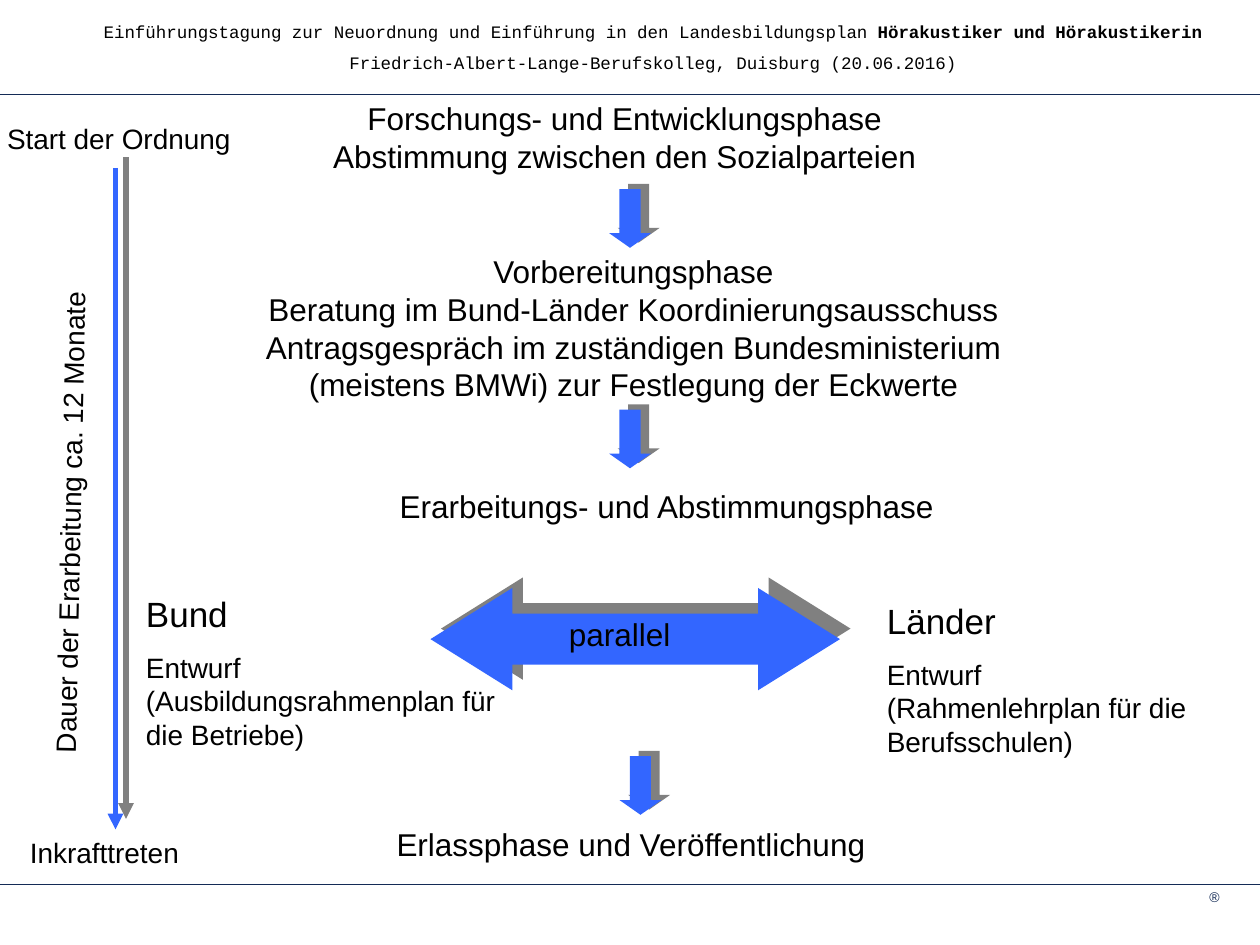
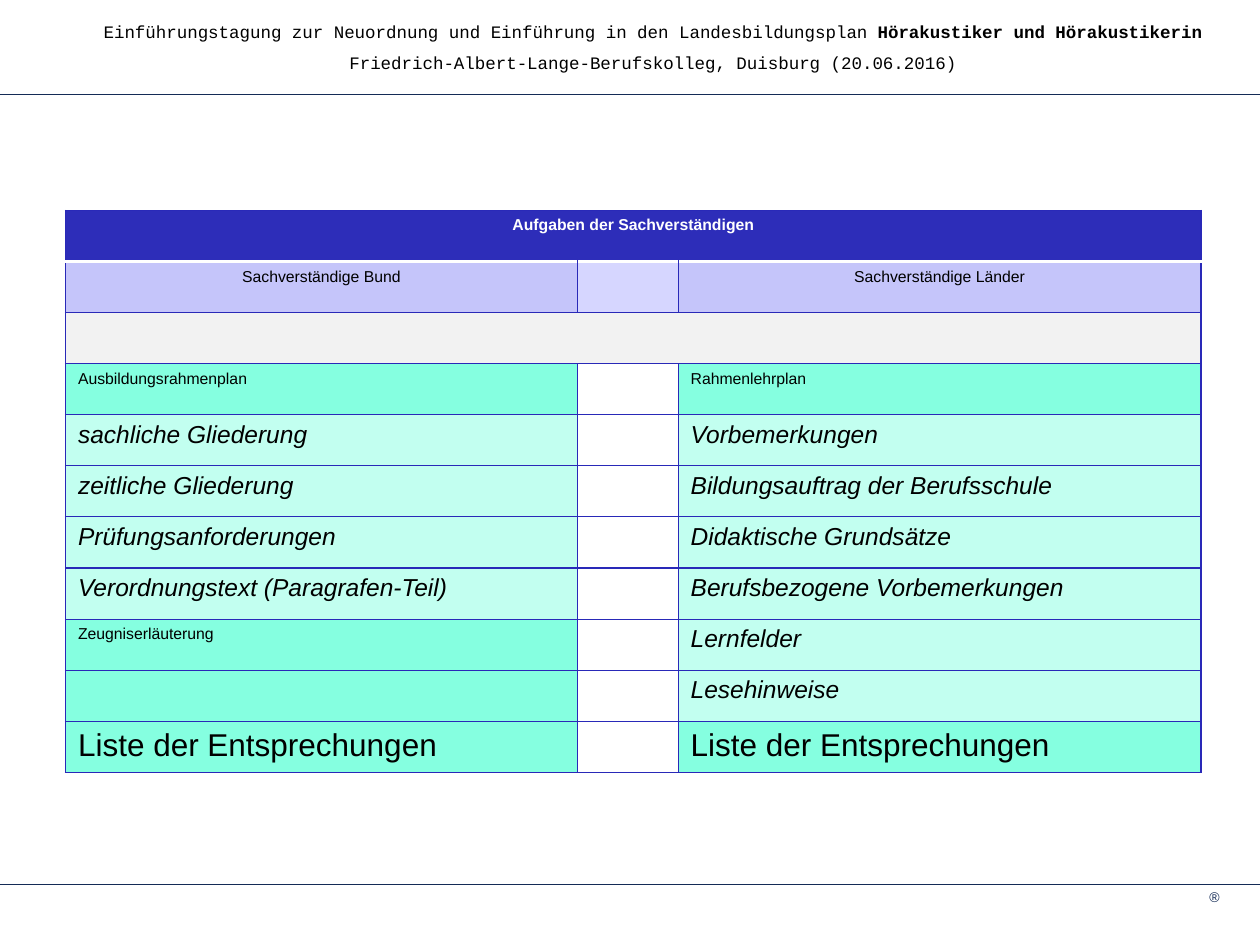
from dataclasses import dataclass

from lxml.etree import SubElement as Sub
from pptx import Presentation
from pptx.dml.color import RGBColor as Rgb
from pptx.enum.shapes import MSO_CONNECTOR as Link, MSO_SHAPE as Kind
from pptx.enum.text import MSO_ANCHOR as Anchor, MSO_AUTO_SIZE as Fit, PP_ALIGN as Align
from pptx.oxml.ns import qn
from pptx.util import Pt


@dataclass(frozen=True)
class Theme:
    # Fonts and sizes
    sans: str = "Arial"
    mono: str = "Courier New"
    mark: float = 8
    cell: float = 9
    head: float = 10
    item: float = 14
    note: float = 16
    phase: float = 18
    side: float = 20
    gap: float = 0.57  # space before a paragraph, as a share of its size
    # Colours
    ink: str = "000000"
    white: str = "FFFFFF"
    navy: str = "142B56"
    blue: str = "3366FF"
    grey: str = "808080"
    edge: str = "2929B8"
    band: str = "2D2DB9"
    lilac: str = "C5C5FA"
    pale: str = "D6D6FF"
    fog: str = "F2F2F2"
    mint: str = "85FFE0"
    foam: str = "C2FFF0"


class Deck:
    def __init__(self, theme):
        self.theme = theme
        self.prs = Presentation()
        self.prs.slide_width, self.prs.slide_height = Pt(720), Pt(540)
        self.slide = None

    def page(self):
        """Start a slide with header, rules and footer mark."""
        t = self.theme
        self.slide = self.prs.slides.add_slide(self.prs.slide_layouts[5])
        self.header()
        for y in (54, 505.5):
            self.line((0, y), (720, y), t.navy, 0.75)
        self.text((684, 504, 24, 16.5), ["®"], t.mark, color=t.navy)

    def header(self):
        t = self.theme
        title = self.slide.shapes.title
        title.left, title.top, title.width, title.height = map(Pt, (42.5, 8.6, 661, 37.5))
        frame = title.text_frame
        frame.auto_size = Fit.NONE
        frame.vertical_anchor = Anchor.TOP
        frame.text = ("Einführungstagung zur Neuordnung und Einführung in den "
                      "Landesbildungsplan \n"
                      "Friedrich-Albert-Lange-Berufskolleg, Duisburg (20.06.2016)")
        first, second = frame.paragraphs
        job = first.add_run()
        job.text = "Hörakustiker und Hörakustikerin"
        for para in (first, second):
            para.alignment = Align.CENTER
            for run in para.runs:
                self.font(run.font, t.head, t.ink, t.mono)
        job.font.bold = True
        second.space_before = Pt(t.head * t.gap)

    def font(self, font, size, color, name=None):
        font.name = name or self.theme.sans
        font.size = Pt(size)
        font.color.rgb = Rgb.from_string(color)

    def text(self, box, lines, size, color=None, align=Align.LEFT,
             anchor=Anchor.TOP, gap=0, turn=0):
        """Text box; a line is a string or a (string, size) pair."""
        shape = self.slide.shapes.add_textbox(*map(Pt, box))
        shape.rotation = turn
        frame = shape.text_frame
        frame.word_wrap = True
        frame.vertical_anchor = anchor
        pairs = [(x, size) if isinstance(x, str) else x for x in lines]
        frame.text = "\n".join(words for words, _ in pairs)
        for i, (para, (_, pts)) in enumerate(zip(frame.paragraphs, pairs)):
            para.alignment = align
            if i:
                para.space_before = Pt(pts * gap)
            for run in para.runs:
                self.font(run.font, pts, color or self.theme.ink)

    def phase(self, box, *lines):
        self.text(box, lines, self.theme.phase, align=Align.CENTER, anchor=Anchor.MIDDLE)

    def effect(self, shape, dist=0, angle=0):
        """Set the shadow; none when the distance is zero."""
        group = Sub(shape._element.spPr, qn("a:effectLst"))
        if dist:
            cast = Sub(group, qn("a:outerShdw"), dist=str(Pt(dist)),
                       dir=str(angle * 60000), algn="ctr", rotWithShape="0")
            Sub(cast, qn("a:srgbClr"), val=self.theme.grey)

    def line(self, start, end, color, width, arrow=False):
        link = self.slide.shapes.add_connector(Link.STRAIGHT, *map(Pt, start + end))
        link.line.color.rgb = Rgb.from_string(color)
        link.line.width = Pt(width)
        if arrow:
            Sub(link.line._get_or_add_ln(), qn("a:tailEnd"), type="triangle")
        self.effect(link, 8.5 if arrow else 0, 315)

    def arrow(self, kind, box, tip, dist, angle):
        shape = self.slide.shapes.add_shape(kind, *map(Pt, box))
        shape.adjustments[0], shape.adjustments[1] = 0.5, tip
        shape.fill.solid()
        shape.fill.fore_color.rgb = Rgb.from_string(self.theme.blue)
        shape.line.fill.background()
        self.effect(shape, dist, angle)

    def down(self, x, y):
        self.arrow(Kind.DOWN_ARROW, (x, y, 24, 33.6), 0.35, 5.8, 329)

    def table(self, spot, widths, high, rows, looks):
        """Rows hold (text, look) cells; a single cell spans its row."""
        t = self.theme
        grid = self.slide.shapes.add_table(
            len(rows), len(widths), *map(Pt, spot),
            Pt(sum(widths)), Pt(high * len(rows))).table
        grid.first_row = grid.horz_banding = False
        for col, width in zip(grid.columns, widths):
            col.width = Pt(width)
        for r, row in enumerate(rows):
            grid.rows[r].height = Pt(high)
            if len(row) == 1:
                grid.cell(r, 0).merge(grid.cell(r, len(widths) - 1))
                row = row * len(widths)
            for c, (words, look) in enumerate(row):
                cell = grid.cell(r, c)
                self.fill(cell, "" if cell.is_spanned else words, looks[look])
                white = {0: "B", 1: "T"}.get(r)
                for at, side in enumerate("LRTB"):
                    self.edge(cell, at, side, *((t.white, 2) if side == white
                                                else (t.edge, 0.75)))

    def fill(self, cell, words, look):
        back, color, size, bold, italic, align = look
        cell.fill.solid()
        cell.fill.fore_color.rgb = Rgb.from_string(back)
        if words:
            cell.text_frame.text = words
            para = cell.text_frame.paragraphs[0]
            para.alignment = align
            font = para.runs[0].font
            self.font(font, size, color)
            font.bold, font.italic = bold, italic

    def edge(self, cell, at, side, color, width):
        props = cell._tc.get_or_add_tcPr()
        ln = Sub(props, qn(f"a:ln{side}"), w=str(Pt(width)))
        Sub(Sub(ln, qn("a:solidFill")), qn("a:srgbClr"), val=color)
        props.insert(at, ln)


def phases(deck):
    t = deck.theme
    deck.page()
    # Phases from top to bottom
    deck.phase((126, 54, 462, 48), "Forschungs- und Entwicklungsphase",
               "Abstimmung zwischen den Sozialparteien")
    deck.down(348, 108)
    deck.phase((106.5, 137.5, 511, 99.5), "Vorbereitungsphase",
               "Beratung im Bund-Länder Koordinierungsausschuss",
               "Antragsgespräch im zuständigen Bundesministerium",
               "(meistens BMWi) zur Festlegung der Eckwerte")
    deck.down(348, 234)
    deck.phase((90, 274.5, 582, 29), "Erarbeitungs- und Abstimmungsphase")
    # Two drafts side by side
    deck.text((76.3, 334.8, 231, 99.4),
              [("Bund", t.side), "Entwurf\v(Ausbildungsrahmenplan für die Betriebe)"],
              t.note, gap=t.gap)
    deck.text((499.7, 339, 198.7, 99.4),
              [("Länder", t.side), "Entwurf\v(Rahmenlehrplan für die Berufsschulen)"],
              t.note, gap=t.gap)
    deck.arrow(Kind.LEFT_RIGHT_ARROW, (246, 336, 234, 58.5), 0.8, 8.5, 315)
    deck.text((318, 348, 96, 29), ["parallel"], t.phase)
    deck.down(354, 432)
    deck.phase((162, 468, 397, 29), "Erlassphase und Veröffentlichung")
    # Time line on the left
    deck.text((10, 473.8, 114.5, 27), ["Inkrafttreten"], t.note)
    deck.line((66, 96), (66, 474), t.blue, 3, arrow=True)
    deck.text((-104.5, 285, 288, 27), ["Dauer der Erarbeitung ca. 12 Monate"], t.note,
              align=Align.CENTER, anchor=Anchor.MIDDLE, turn=271.1)
    deck.text((-3, 66, 153.4, 27), ["Start der Ordnung"], t.note)


def tasks(deck):
    t = deck.theme
    deck.page()
    # Look: fill, text colour, size, bold, italic, alignment
    looks = {
        "head": (t.band, t.white, t.cell, True, False, Align.CENTER),
        "who": (t.lilac, t.ink, t.cell, False, False, Align.CENTER),
        "mid": (t.pale, t.ink, t.cell, False, False, Align.LEFT),
        "fog": (t.fog, t.ink, t.cell, False, False, Align.LEFT),
        "none": (t.white, t.ink, t.cell, False, False, Align.LEFT),
        "plan": (t.mint, t.ink, t.cell, False, False, Align.LEFT),
        "item": (t.foam, t.ink, t.item, False, True, Align.LEFT),
        "list": (t.mint, t.ink, t.phase, False, False, Align.LEFT),
    }
    pairs = [
        ("Ausbildungsrahmenplan", "plan", "Rahmenlehrplan", "plan"),
        ("sachliche Gliederung", "item", "Vorbemerkungen", "item"),
        ("zeitliche Gliederung", "item", "Bildungsauftrag der Berufsschule", "item"),
        ("Prüfungsanforderungen", "item", "Didaktische Grundsätze", "item"),
        ("Verordnungstext (Paragrafen-Teil)", "item", "Berufsbezogene Vorbemerkungen", "item"),
        ("Zeugniserläuterung", "plan", "Lernfelder", "item"),
        ("", "plan", "Lesehinweise", "item"),
        ("Liste der Entsprechungen", "list", "Liste der Entsprechungen", "list"),
    ]
    rows = [
        [("Aufgaben der Sachverständigen", "head")],
        [("Sachverständige Bund", "who"), ("", "mid"), ("Sachverständige Länder", "who")],
        [("", "fog")],
    ]
    rows += [[(a, x), ("", "none"), (b, y)] for a, x, b, y in pairs]
    deck.table((37.4, 120.2), (292.5, 57.6, 298.8), 29.2, rows, looks)


def main():
    deck = Deck(Theme())
    phases(deck)
    tasks(deck)
    deck.prs.save("out.pptx")


if __name__ == "__main__":
    main()
